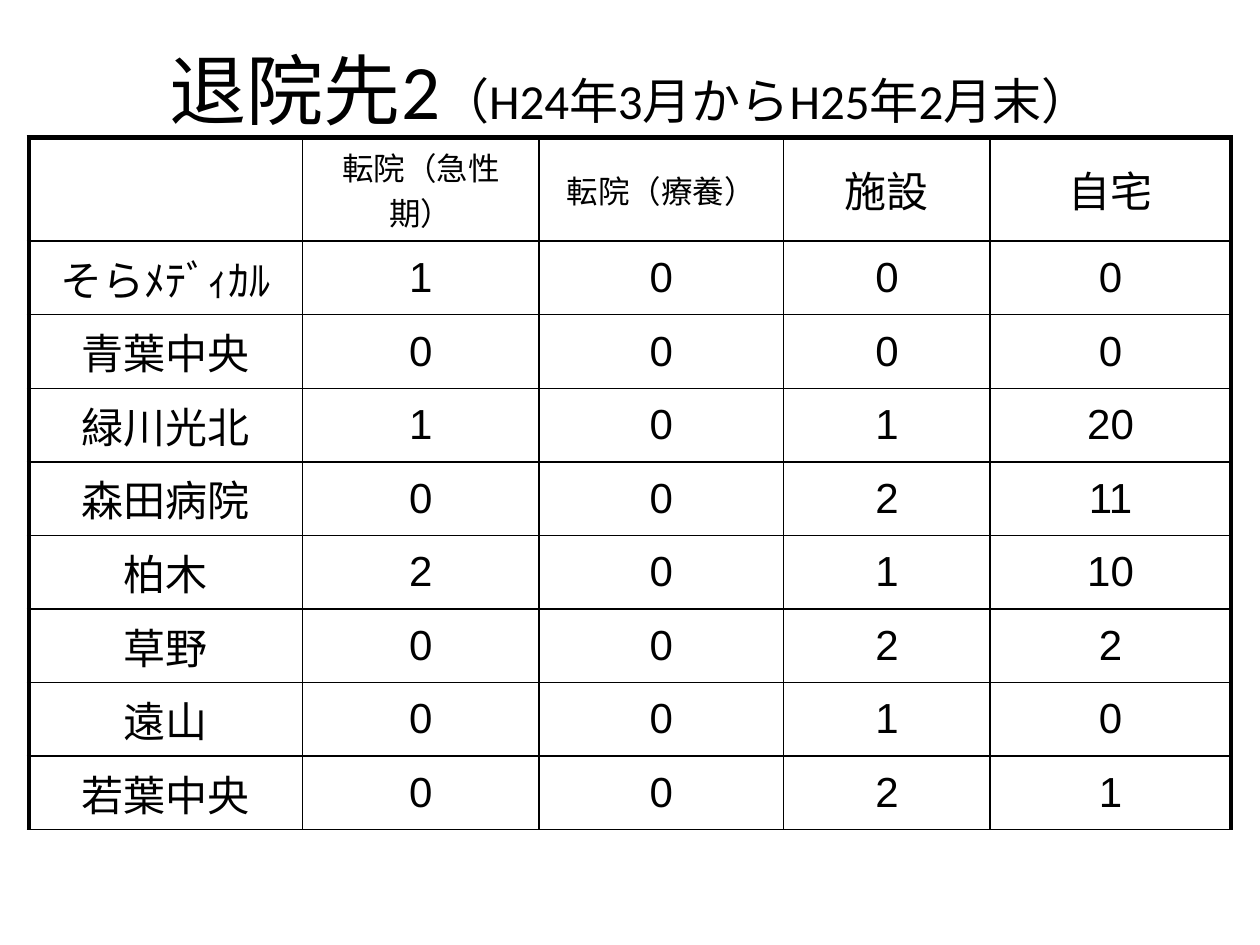
from dataclasses import dataclass

from lxml import etree
from pptx import Presentation
from pptx import util as u
from pptx.dml import color
from pptx.enum import text
from pptx.oxml import ns


@dataclass(frozen=True)
class Theme:
    ink: color.RGBColor = color.RGBColor(0, 0, 0)
    title_font: str = "Calibri"
    table_font: str = "Arial"
    title_size: int = 44
    period_size: int = 28
    small_size: int = 18
    body_size: int = 24
    thin_line: int = 1
    thick_line: int = 3


THEME = Theme()

COLUMN_WIDTHS = [2.17, 1.88, 1.94, 1.64, 1.91]
ROW_HEIGHT = 0.58
HEADERS = ["", "転院（急性期）", "転院（療養）", "施設", "自宅"]
DISCHARGES = [
    ("そらﾒﾃﾞｨｶﾙ", 1, 0, 0, 0),
    ("青葉中央", 0, 0, 0, 0),
    ("緑川光北", 1, 0, 1, 20),
    ("森田病院", 0, 0, 2, 11),
    ("柏木", 2, 0, 1, 10),
    ("草野", 0, 0, 2, 2),
    ("遠山", 0, 0, 1, 0),
    ("若葉中央", 0, 0, 2, 1),
]


def set_borders(cell, widths):
    """Draw the left, right, top and bottom lines, widths in points."""
    properties = cell._tc.get_or_add_tcPr()
    for index, (side, width) in enumerate(zip("LRTB", widths)):
        line = etree.Element(ns.qn(f"a:ln{side}"), w=str(u.Pt(width)))
        fill = etree.SubElement(line, ns.qn("a:solidFill"))
        etree.SubElement(fill, ns.qn("a:srgbClr"), val=str(THEME.ink))
        properties.insert(index, line)


def fill_cell(cell, value, size):
    cell.fill.background()
    cell.vertical_anchor = text.MSO_ANCHOR.MIDDLE
    cell.text = str(value)
    paragraph = cell.text_frame.paragraphs[0]
    paragraph.alignment = text.PP_ALIGN.CENTER
    paragraph.space_before = u.Pt(size * 0.2)
    paragraph.font.name = THEME.table_font
    paragraph.font.size = u.Pt(size)
    paragraph.font.color.rgb = THEME.ink


def add_title(slide, left, top, width, height):
    title = slide.shapes.title
    title.left, title.top, title.width, title.height = left, top, width, height
    title.text_frame.vertical_anchor = text.MSO_ANCHOR.MIDDLE
    paragraph = title.text_frame.paragraphs[0]
    paragraph.alignment = text.PP_ALIGN.CENTER
    paragraph.font.name = THEME.title_font
    paragraph.font.color.rgb = THEME.ink
    for words, size in [("退院先2", THEME.title_size),
                        ("（H24年3月からH25年2月末）", THEME.period_size)]:
        run = paragraph.add_run()
        run.text = words
        run.font.size = u.Pt(size)


def add_discharge_table(slide, left, top, width, height):
    rows = [HEADERS, *DISCHARGES]
    last_column = len(HEADERS) - 1
    table = slide.shapes.add_table(
        len(rows), len(HEADERS), left, top, width, height).table
    table.first_row = table.horz_banding = False
    for column, column_width in zip(table.columns, COLUMN_WIDTHS):
        column.width = u.Inches(column_width)
    for row_index, values in enumerate(rows):
        table.rows[row_index].height = u.Inches(ROW_HEIGHT)
        for column_index, value in enumerate(values):
            cell = table.cell(row_index, column_index)
            small = row_index == 0 and column_index in (1, 2)
            fill_cell(cell, value, THEME.small_size if small else THEME.body_size)
            # Heavy frame on the left, right and top; thin lines elsewhere
            heavy = (column_index == 0, column_index == last_column,
                     row_index == 0, False)
            set_borders(cell, [THEME.thick_line if edge else THEME.thin_line
                               for edge in heavy])


def main():
    presentation = Presentation()
    presentation.slide_width = u.Inches(10)
    presentation.slide_height = u.Inches(7.5)
    slide = presentation.slides.add_slide(presentation.slide_layouts[5])

    # Title with the period covered
    add_title(slide, u.Inches(0.5), u.Inches(0.08), u.Inches(9), u.Inches(1.25))
    # Discharges by hospital and destination
    add_discharge_table(slide, u.Inches(0.23), u.Inches(1.09),
                        u.Inches(sum(COLUMN_WIDTHS)),
                        u.Inches(ROW_HEIGHT * (len(DISCHARGES) + 1)))
    presentation.save("out.pptx")


if __name__ == "__main__":
    main()
